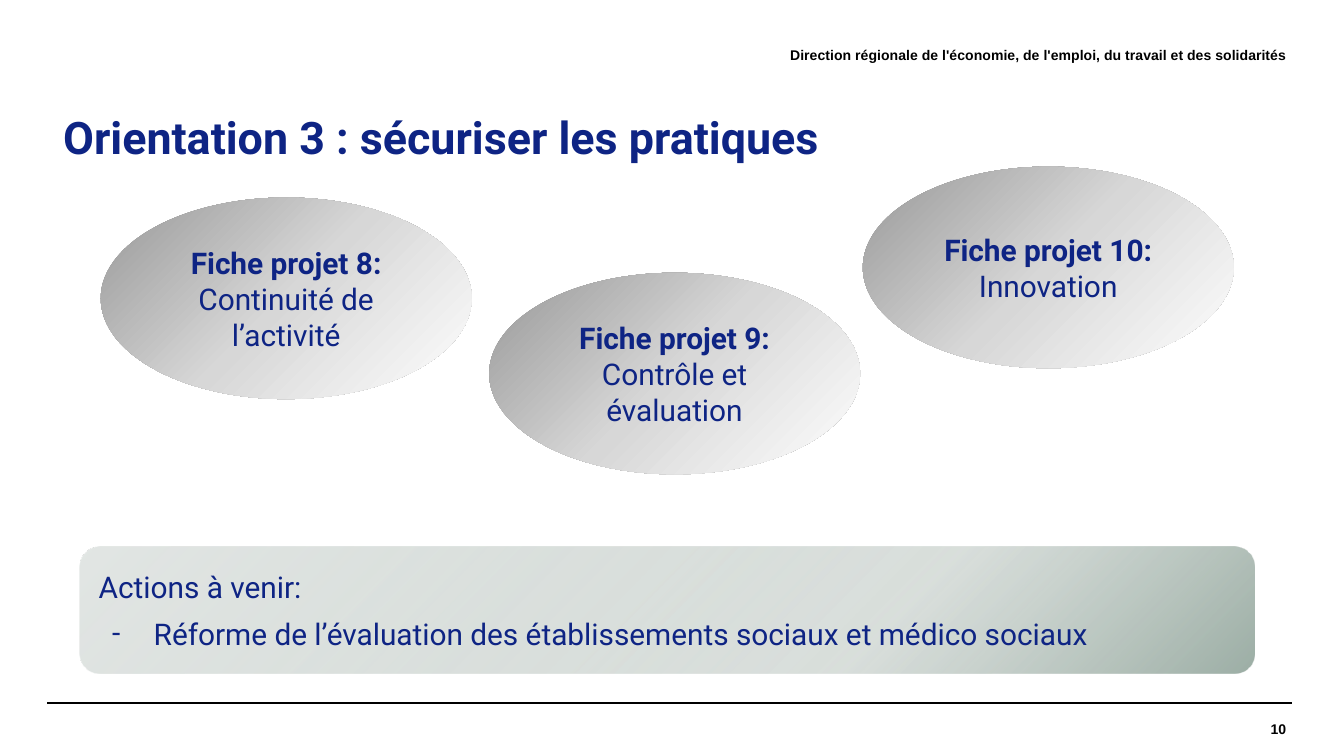
"""Build the slide on orientation 3 with its project sheets and coming actions."""
from lxml.etree import SubElement
from pptx import Presentation
from pptx.dml.color import RGBColor as Rgb
from pptx.enum.shapes import MSO_CONNECTOR as Link, MSO_SHAPE as Shape
from pptx.enum.text import MSO_ANCHOR as Anchor, MSO_AUTO_SIZE as Fit, PP_ALIGN as Align
from pptx.oxml.ns import qn
from pptx.util import Inches, Pt

INK = {"navy": "0E2484", "black": "000000"}
GREY = [(0, "979797", 100), (50, "D7D7D7", 100), (100, "FFFFFF", 100)]
SAGE = [(0, "9CAEA5", 100), (32, "C4CDC8", 64), (100, "E2E6E4", 100)]


def write(para, text, size, face, ink, bold=False):
    run = para.add_run()
    run.text = text
    font = run.font
    font.size, font.name, font.bold = Pt(size), face, bold
    font.color.rgb = Rgb.from_string(INK[ink])


def shade(shape, stops, angle):
    shape.shadow.inherit = False
    shape.line.fill.background()
    shape.fill.gradient()
    grad = shape.fill._xPr.find(qn("a:gradFill"))
    for child in list(grad):
        grad.remove(child)
    row = SubElement(grad, qn("a:gsLst"))
    for spot, hue, alpha in stops:
        stop = SubElement(row, qn("a:gs"), pos=str(spot * 1000))
        color = SubElement(stop, qn("a:srgbClr"), val=hue)
        if alpha < 100:
            SubElement(color, qn("a:alpha"), val=str(alpha * 1000))
    SubElement(grad, qn("a:lin"), ang=str(angle * 60000), scaled="0")


deck = Presentation()
deck.slide_width = Inches(10)
deck.slide_height = deck.slide_width * 9 // 16
slide = deck.slides.add_slide(deck.slide_layouts[5])
shapes = slide.shapes

for left in (0.35, 0.39):
    rule = shapes.add_connector(
        Link.STRAIGHT, Inches(left), Inches(5.23), Inches(left + 9.22), Inches(5.23))
    rule.line.color.rgb = Rgb.from_string(INK["black"])
    rule.line.width = Pt(0.8)
    SubElement(rule._element.spPr, qn("a:effectLst"))

title = shapes.title
title.left, title.top, title.width, title.height = map(Inches, (0.35, 0.75, 9.21, 0.59))
frame = title.text_frame
frame.auto_size, frame.word_wrap = Fit.NONE, True
frame.vertical_anchor = Anchor.MIDDLE
para = frame.paragraphs[0]
para.alignment, para.line_spacing = Align.LEFT, 0.9
para._p.get_or_add_pPr().set("marL", str(Inches(0.02)))
write(para, "Orientation 3 : sécuriser les pratiques", 24, "Roboto", "navy", True)

edge = 9.57
for text, top, wide in (
    ("Direction régionale de l'économie, de l'emploi, du travail et des solidarités", 0.21, 6.43),
    ("10", 5.23, 1.48),
):
    box = shapes.add_textbox(Inches(edge - wide), Inches(top), Inches(wide), Inches(0.39))
    frame = box.text_frame
    frame.word_wrap, frame.vertical_anchor = True, Anchor.MIDDLE
    frame.margin_left = frame.margin_right = frame.margin_top = frame.margin_bottom = 0
    para = frame.paragraphs[0]
    para.alignment = Align.RIGHT
    write(para, text, 7.5, "Arial", "black", True)

for num, topic, left, top in (
    (8, "Continuité de l’activité", 0.75, 1.47),
    (10, "Innovation", 6.42, 1.24),
    (9, "Contrôle et évaluation", 3.64, 2.03),
):
    oval = shapes.add_shape(Shape.OVAL, Inches(left), Inches(top), Inches(2.76), Inches(1.5))
    shade(oval, GREY, 45)
    frame = oval.text_frame
    frame.word_wrap, frame.vertical_anchor = True, Anchor.MIDDLE
    para = frame.paragraphs[0]
    para.alignment = Align.CENTER
    write(para, f"Fiche projet {num}: ", 16, "Roboto", "navy", True)
    write(para, topic, 16, "Roboto", "navy")

panel = shapes.add_shape(
    Shape.ROUNDED_RECTANGLE, Inches(0.59), Inches(4.07), Inches(8.74), Inches(0.94))
shade(panel, SAGE, 225)
frame = panel.text_frame
frame.word_wrap, frame.vertical_anchor = True, Anchor.MIDDLE
head, item = frame.paragraphs[0], frame.add_paragraph()
head.alignment = item.alignment = Align.LEFT
write(head, "Actions à venir:", 16, "Roboto", "navy")
item.space_before = Pt(6)
props = item._p.get_or_add_pPr()
props.set("marL", str(Inches(0.41)))
props.set("indent", str(Inches(-0.31)))
SubElement(props, qn("a:buFont"), typeface="Roboto")
SubElement(props, qn("a:buChar"), char="-")
write(item, "Réforme de l’évaluation des établissements sociaux et médico sociaux",
      16, "Roboto", "navy")

deck.save("out.pptx")
